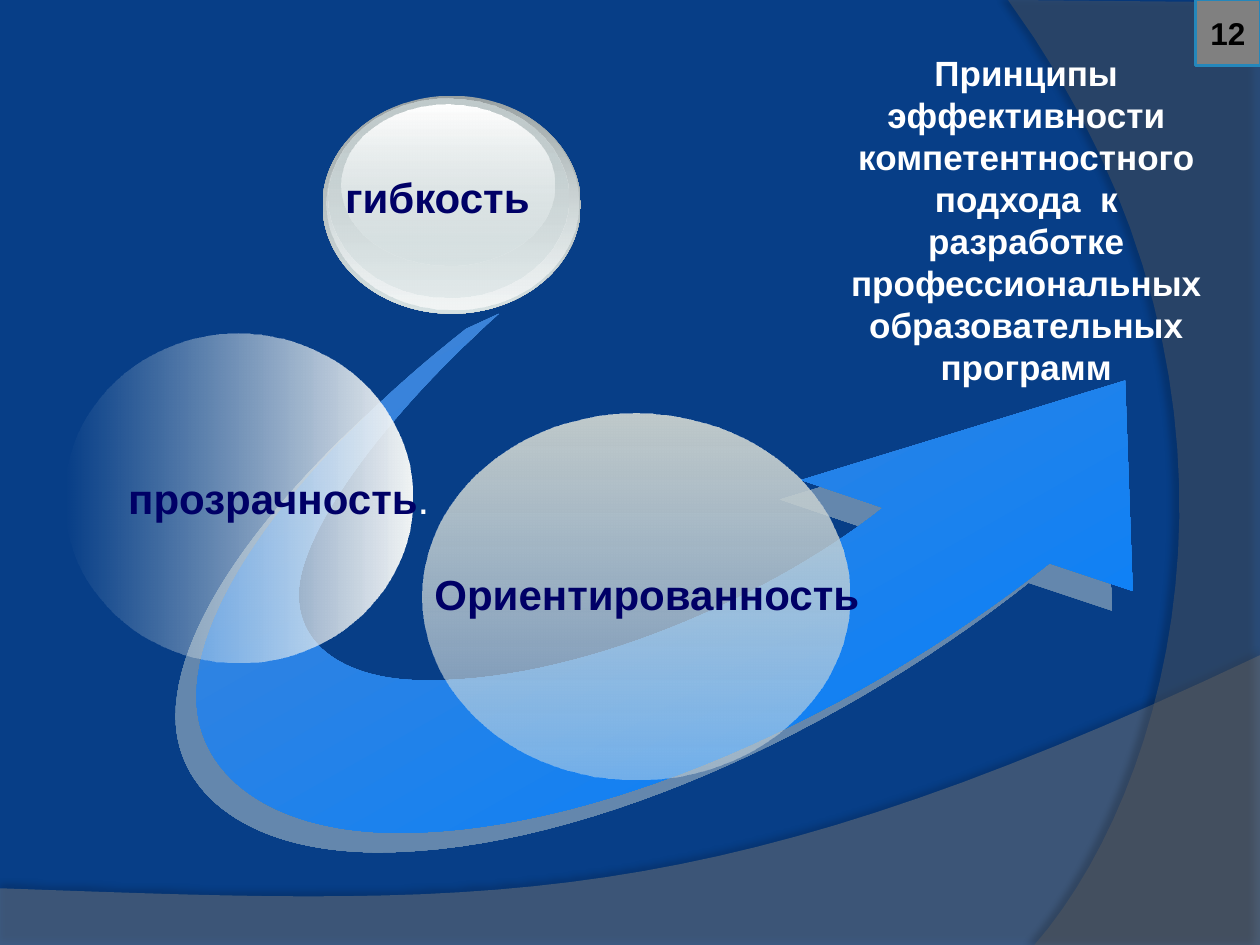
from typing import NamedTuple, Optional

from lxml.etree import SubElement
from pptx import Presentation
from pptx.dml.color import RGBColor
from pptx.enum.shapes import MSO_SHAPE
from pptx.enum.text import MSO_ANCHOR, PP_ALIGN
from pptx.oxml.ns import qn
from pptx.util import Emu, Pt

PX = 9144
NAVY = RGBColor(0x07, 0x3E, 0x87)
INK = RGBColor(0x00, 0x00, 0x66)
BLACK = RGBColor(0x00, 0x00, 0x00)
WHITE = RGBColor(0xFF, 0xFF, 0xFF)
GRAY = RGBColor(0x7F, 0x7F, 0x7F)
DARK_GRAY = RGBColor(0x5E, 0x5E, 0x5E)
BADGE_GRAY = RGBColor(0x80, 0x80, 0x80)
BADGE_LINE = RGBColor(0x24, 0x87, 0xBB)
STEEL = RGBColor(0x99, 0xA1, 0xA2)
SILVER = RGBColor(0xC1, 0xCB, 0xCC)
MIST = RGBColor(0xD6, 0xE1, 0xE2)
PEARL = RGBColor(0xF2, 0xF5, 0xF5)
SHADOW_GRAY = RGBColor(0xC1, 0xD1, 0xD3)
SOFT_BLUE = RGBColor(0x45, 0x84, 0xD3)
BLUE = RGBColor(0x00, 0x80, 0xFF)


class Point(NamedTuple):
    x: float
    y: float


class Curve(NamedTuple):
    control1: Point
    control2: Point
    end: Point


class Box(NamedTuple):
    x: int
    y: int
    w: int
    h: int


class Gradient(NamedTuple):
    start: RGBColor
    end: RGBColor
    start_alpha: int = 100
    end_alpha: int = 100
    angle: float = 90


class Shadow(NamedTuple):
    color: RGBColor
    alpha: int
    blur: float
    dist: float
    angle: int


class Disc(NamedTuple):
    box: Box
    gradient: Gradient


class Label(NamedTuple):
    box: Box
    text: str
    size: int
    color: RGBColor
    align: Optional[PP_ALIGN] = None


GLASS = Gradient(MIST, PEARL, start_alpha=0)
HAZE = Gradient(SILVER, MIST, end_alpha=48)
BUTTON = [
    Disc(Box(256, 76, 205, 173), Gradient(STEEL, MIST)),
    Disc(Box(259, 77, 200, 169), GLASS),
    Disc(Box(261, 78, 190, 158), HAZE),
    Disc(Box(271, 83, 169, 128), Gradient(WHITE, MIST, end_alpha=38)),
]
TRANSPARENCY = Disc(Box(59, 257, 261, 276), GLASS)
ORIENTATION = Disc(Box(335, 328, 339, 291), HAZE)
LABELS = [
    Label(Box(264, 131, 189, 50), "гибкость", 24, INK),
    Label(Box(335, 446, 370, 50), "Ориентированность", 24, INK),
    Label(Box(657, 36, 315, 279),
          "Принципы эффективности компетентностного подхода  к разработке "
          "профессиональных образовательных программ",
          20, WHITE, PP_ALIGN.CENTER),
]

WAVE_BASE = [Point(0, 751), Point(1000, 751), Point(1000, 520)]
WAVE_CREST = [Curve(Point(559, 729), Point(391, 719), Point(0, 705))]
SIDE_EDGE = [Point(1000, 2), Point(1000, 750), Point(821, 750)]
SIDE_ARC = [Curve(Point(935, 619), Point(1018, 300), Point(800, 0))]

ARROW_TAIL = [Point(396, 249), Point(370, 261)]
ARROW_OUTER_EDGE = [
    Curve(Point(250, 355), Point(156, 470), Point(156, 553)),
    Curve(Point(156, 615), Point(215, 661), Point(317, 661)),
    Curve(Point(475, 661), Point(680, 568), Point(833, 447)),
]
ARROW_HEAD = [Point(899, 469), Point(893, 302), Point(636, 381), Point(701, 403)]
ARROW_INNER_EDGE = [
    Curve(Point(610, 475), Point(460, 540), Point(342, 540)),
    Curve(Point(278, 541), Point(237, 515), Point(237, 472)),
    Curve(Point(237, 425), Point(300, 335), Point(396, 249)),
]


def bezier(start: Point, curve: Curve, steps: int = 30) -> list[Point]:
    def at(t: float) -> Point:
        weights = ((1 - t) ** 3, 3 * t * (1 - t) ** 2, 3 * t * t * (1 - t), t ** 3)
        knots = (start, *curve)
        return Point(sum(w * k.x for w, k in zip(weights, knots)),
                     sum(w * k.y for w, k in zip(weights, knots)))

    return [at(i / steps) for i in range(1, steps + 1)]


def extend(points: list[Point], curves: list[Curve]) -> list[Point]:
    outline = list(points)
    for curve in curves:
        outline += bezier(outline[-1], curve)
    return outline


def emu(values: tuple) -> list[Emu]:
    return [Emu(round(v * PX)) for v in values]


def set_alpha(color, percent: int) -> None:
    if percent < 100:
        SubElement(color, qn("a:alpha")).set("val", str(percent * 1000))


def fill_solid(sp, color: RGBColor, alpha: int = 100) -> None:
    sp.fill.solid()
    sp.fill.fore_color.rgb = color
    set_alpha(next(sp.fill._xPr.iter(qn("a:srgbClr"))), alpha)


def fill_gradient(sp, gradient: Gradient) -> None:
    sp.fill.gradient()
    sp.fill.gradient_angle = 360 - gradient.angle
    for stop, color in zip(sp.fill.gradient_stops, (gradient.start, gradient.end)):
        stop.color.rgb = color
    colors = list(sp.fill._xPr.iter(qn("a:srgbClr")))
    for color, alpha in zip(colors, (gradient.start_alpha, gradient.end_alpha)):
        set_alpha(color, alpha)


def add_shadow(sp, shadow: Shadow) -> None:
    effects = sp._element.spPr.find(qn("a:effectLst"))
    outer = SubElement(effects, qn("a:outerShdw"), {
        "blurRad": str(Pt(shadow.blur)), "dist": str(Pt(shadow.dist)),
        "dir": str(shadow.angle * 60000), "algn": "ctr", "rotWithShape": "0"})
    color = SubElement(outer, qn("a:srgbClr"), {"val": str(shadow.color)})
    set_alpha(color, shadow.alpha)


def add_outline(shapes, points: list[Point], shadow: Shadow):
    start, *rest = [emu(point) for point in points]
    builder = shapes.build_freeform(*start, scale=1.0)
    builder.add_line_segments(rest, close=True)
    sp = builder.convert_to_shape()
    sp.line.fill.background()
    sp.shadow.inherit = False
    add_shadow(sp, shadow)
    return sp


def add_disc(shapes, disc: Disc):
    sp = shapes.add_shape(MSO_SHAPE.OVAL, *emu(disc.box))
    sp.shadow.inherit = False
    sp.line.fill.background()
    fill_gradient(sp, disc.gradient)
    return sp


def format_run(r, size: int, color: RGBColor, bold: bool = True) -> None:
    r.font.name = "Arial"
    r.font.size = Pt(size)
    r.font.bold = bold
    r.font.color.rgb = color


def add_label(shapes, label: Label) -> None:
    tf = shapes.add_textbox(*emu(label.box)).text_frame
    tf.word_wrap = True
    tf.text = label.text
    p = tf.paragraphs[0]
    p.alignment = label.align
    format_run(p.runs[0], label.size, label.color)


def add_backdrop(shapes) -> None:
    wave = add_outline(shapes, extend(WAVE_BASE, WAVE_CREST), Shadow(BLACK, 35, 4, 3.5, 270))
    fill_solid(wave, GRAY, 45)
    side = add_outline(shapes, extend(SIDE_EDGE, SIDE_ARC), Shadow(BLACK, 45, 4, 4, 180))
    fill_solid(side, DARK_GRAY, 40)


def add_arrow(shapes) -> None:
    outer = extend(ARROW_TAIL, ARROW_OUTER_EDGE)
    outline = extend(outer + ARROW_HEAD, ARROW_INNER_EDGE)
    arrow = add_outline(shapes, outline, Shadow(SHADOW_GRAY, 50, 0, 16.3, 137))
    fill_gradient(arrow, Gradient(SOFT_BLUE, BLUE, angle=60.5))


def add_transparency(shapes) -> None:
    sp = add_disc(shapes, TRANSPARENCY)
    sp.rotation = 270
    tf = sp.text_frame
    tf.word_wrap = False
    tf.vertical_anchor = MSO_ANCHOR.MIDDLE
    tf._txBody.bodyPr.set("vert", "eaVert")
    p = tf.paragraphs[0]
    p.alignment = PP_ALIGN.LEFT
    for text, color, bold in (("прозрачность", INK, True), (".", WHITE, False)):
        r = p.add_run()
        r.text = text
        format_run(r, 24, color, bold)


def add_badge(shapes) -> None:
    sp = shapes.add_shape(MSO_SHAPE.RECTANGLE, *emu(Box(949, 0, 51, 52)))
    sp.shadow.inherit = False
    fill_solid(sp, BADGE_GRAY)
    sp.line.color.rgb = BADGE_LINE
    sp.line.width = Pt(1.5)
    tf = sp.text_frame
    tf.text = "12"
    tf.vertical_anchor = MSO_ANCHOR.MIDDLE
    p = tf.paragraphs[0]
    p.alignment = PP_ALIGN.CENTER
    format_run(p.runs[0], 18, BLACK)


def main() -> None:
    prs = Presentation()
    prs.slide_width, prs.slide_height = emu((1000, 750))
    s = prs.slides.add_slide(prs.slide_layouts[6])
    fill = s.background.fill
    fill.solid()
    fill.fore_color.rgb = NAVY
    add_backdrop(s.shapes)
    add_arrow(s.shapes)
    add_transparency(s.shapes)
    button = s.shapes.add_group_shape()
    for disc in BUTTON:
        add_disc(button.shapes, disc)
    add_disc(s.shapes, ORIENTATION)
    for label in LABELS:
        add_label(s.shapes, label)
    add_badge(s.shapes)
    prs.save("out.pptx")


if __name__ == "__main__":
    main()
